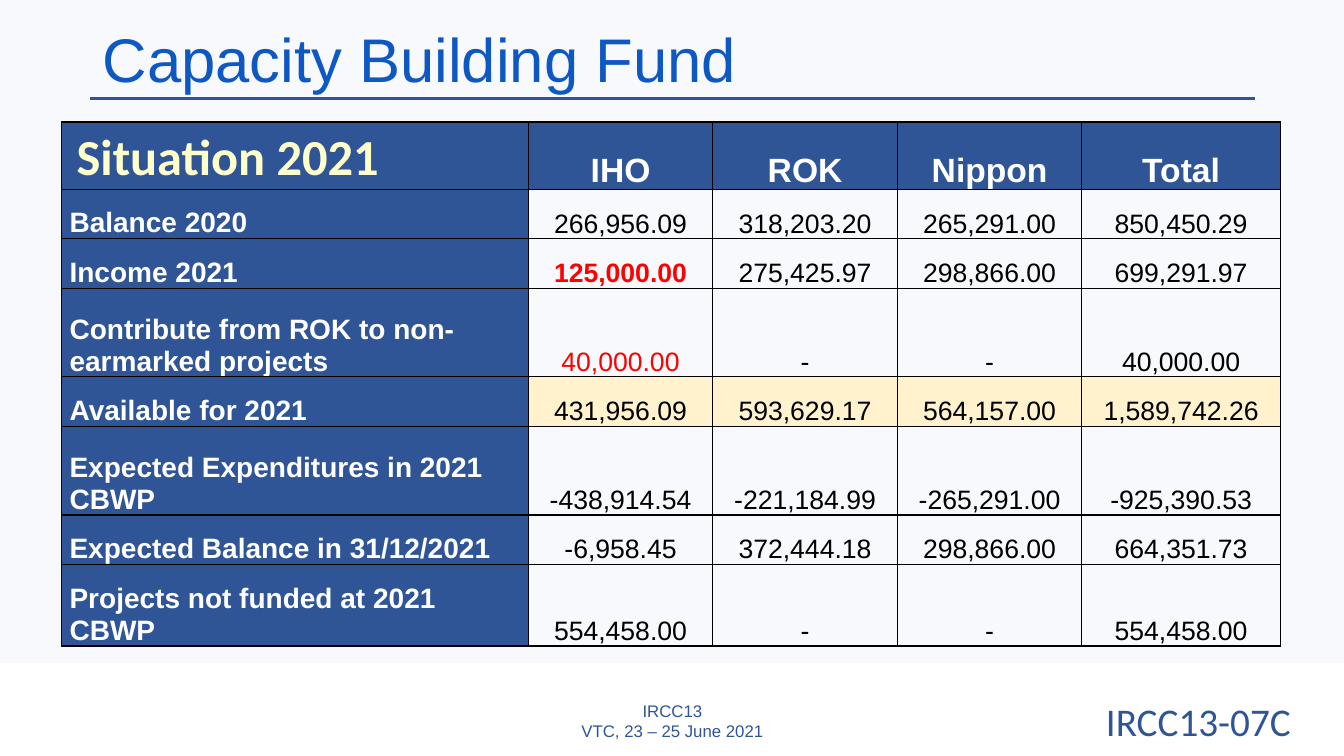
from lxml.etree import SubElement
from pptx import Presentation
from pptx.dml.color import RGBColor
from pptx.enum.shapes import MSO_CONNECTOR as Connector, MSO_SHAPE as Shape
from pptx.enum.text import MSO_ANCHOR as Anchor, PP_ALIGN as Align
from pptx.oxml.ns import qn
from pptx.util import Pt

PX = 9144
NAVY = RGBColor(0x2F, 0x55, 0x97)
BLUE = RGBColor(0x0E, 0x58, 0xC4)
PALE = RGBColor(0xDA, 0xE3, 0xF3)
CREAM = RGBColor(0xFF, 0xF2, 0xCC)
YELLOW = RGBColor(0xFF, 0xFF, 0xCC)
WHITE = RGBColor(0xFF, 0xFF, 0xFF)
BLACK = RGBColor(0, 0, 0)
RED = RGBColor(0xFF, 0, 0)

COLUMNS = [463, 183, 183, 183, 197]
ROWS = [
    (67, "Situation 2021", "IHO", "ROK", "Nippon", "Total"),
    (49, "Balance 2020", "266,956.09", "318,203.20", "265,291.00", "850,450.29"),
    (49, "Income 2021", "125,000.00", "275,425.97", "298,866.00", "699,291.97"),
    (88, "Contribute from ROK to non-earmarked projects", "40,000.00", "-", "-", "40,000.00"),
    (49, "Available for 2021", "431,956.09", "593,629.17", "564,157.00", "1,589,742.26"),
    (88, "Expected Expenditures in 2021 CBWP",
     "-438,914.54", "-221,184.99", "-265,291.00", "-925,390.53"),
    (49, "Expected Balance in 31/12/2021", "-6,958.45", "372,444.18", "298,866.00", "664,351.73"),
    (81, "Projects not funded at 2021 CBWP", "554,458.00", "-", "-", "554,458.00"),
]
INCOME, CONTRIBUTION, AVAILABLE = 2, 3, 4


class FundSlide:
    """Draws the elements of the fund slide in one shared style."""

    def __init__(self, deck):
        self.page = deck.slides.add_slide(deck.slide_layouts[6])
        self.shapes = self.page.shapes

    def style(self, frame, size, color, bold=False, font="Arial", align=Align.LEFT):
        for para in frame.paragraphs:
            para.alignment = align
            for span in para.runs:
                span.font.name = font
                span.font.size = Pt(size)
                span.font.bold = bold
                span.font.color.rgb = color

    def text(self, area, words, size, color, anchor=Anchor.MIDDLE, spacing=1.0, **look):
        box = self.shapes.add_textbox(*(n * PX for n in area))
        frame = box.text_frame
        frame.word_wrap = True
        frame.vertical_anchor = anchor
        frame.text = words
        frame.paragraphs[0].line_spacing = spacing
        self.style(frame, size, color, **look)

    def panel(self, area, color, opacity):
        box = self.shapes.add_shape(Shape.RECTANGLE, *(n * PX for n in area))
        box.shadow.inherit = False
        box.line.fill.background()
        box.fill.solid()
        box.fill.fore_color.rgb = color
        tint = box.fill._xPr.find(".//" + qn("a:srgbClr"))
        SubElement(tint, qn("a:alpha"), val=str(opacity * 1000))

    def rule(self, left, right, top, color, weight):
        line = self.shapes.add_connector(
            Connector.STRAIGHT, left * PX, top * PX, right * PX, top * PX)
        line.line.color.rgb = color
        line.line.width = Pt(weight)
        SubElement(line._element.spPr, qn("a:effectLst"))

    def cell(self, cell, words, fill, margin=8, **look):
        cell.text = words
        cell.vertical_anchor = Anchor.BOTTOM
        cell.margin_left, cell.margin_right = margin * PX, 8 * PX
        cell.margin_top, cell.margin_bottom = 2 * PX, 0
        self.style(cell.text_frame, **look)
        props = cell._tc.get_or_add_tcPr()
        for side in ("lnL", "lnR", "lnT", "lnB"):
            edge = SubElement(props, qn("a:" + side), w=str(Pt(1)))
            SubElement(SubElement(edge, qn("a:solidFill")), qn("a:srgbClr"), val=str(BLACK))
        if fill is None:
            cell.fill.background()
        else:
            cell.fill.solid()
            cell.fill.fore_color.rgb = fill

    def table(self, left, top):
        heights = [row[0] for row in ROWS]
        grid = self.shapes.add_table(
            len(ROWS), len(COLUMNS), left * PX, top * PX,
            sum(COLUMNS) * PX, sum(heights) * PX).table
        grid.first_row = grid.horz_banding = False
        for column, width in zip(grid.columns, COLUMNS):
            column.width = width * PX
        for r, (height, *words) in enumerate(ROWS):
            grid.rows[r].height = height * PX
            for c, word in enumerate(words):
                fill = CREAM if r == AVAILABLE else None
                look = dict(size=19, color=BLACK, align=Align.CENTER)
                if r == 0 or c == 0:
                    fill = NAVY
                    look.update(size=20 if r else 24, color=WHITE, bold=True)
                if c == 0:
                    look.update(align=Align.LEFT)
                    if r == 0:
                        look.update(size=36, color=YELLOW, font="Calibri", margin=15)
                if c == 1 and r in (INCOME, CONTRIBUTION):
                    look.update(color=RED, bold=r == INCOME)
                self.cell(grid.cell(r, c), word, fill, **look)


def main():
    deck = Presentation()
    deck.slide_width, deck.slide_height = 1333 * PX, 750 * PX
    slide = FundSlide(deck)
    slide.text((442, 695, 450, 40), "IRCC13\vVTC, 23 – 25 June 2021", 12, NAVY,
               align=Align.CENTER)
    slide.panel((0, 0, 1333, 658), PALE, 21)
    slide.text((1047, 687, 283, 57), "IRCC13-07C", 28, NAVY, anchor=Anchor.TOP,
               font="Calibri", align=Align.CENTER)
    slide.rule(89, 1245, 98, NAVY, 2.25)
    slide.text((92, -10, 1150, 145), "Capacity Building Fund", 44, BLUE, spacing=0.9)
    slide.table(61, 121)
    deck.save("out.pptx")


if __name__ == "__main__":
    main()
